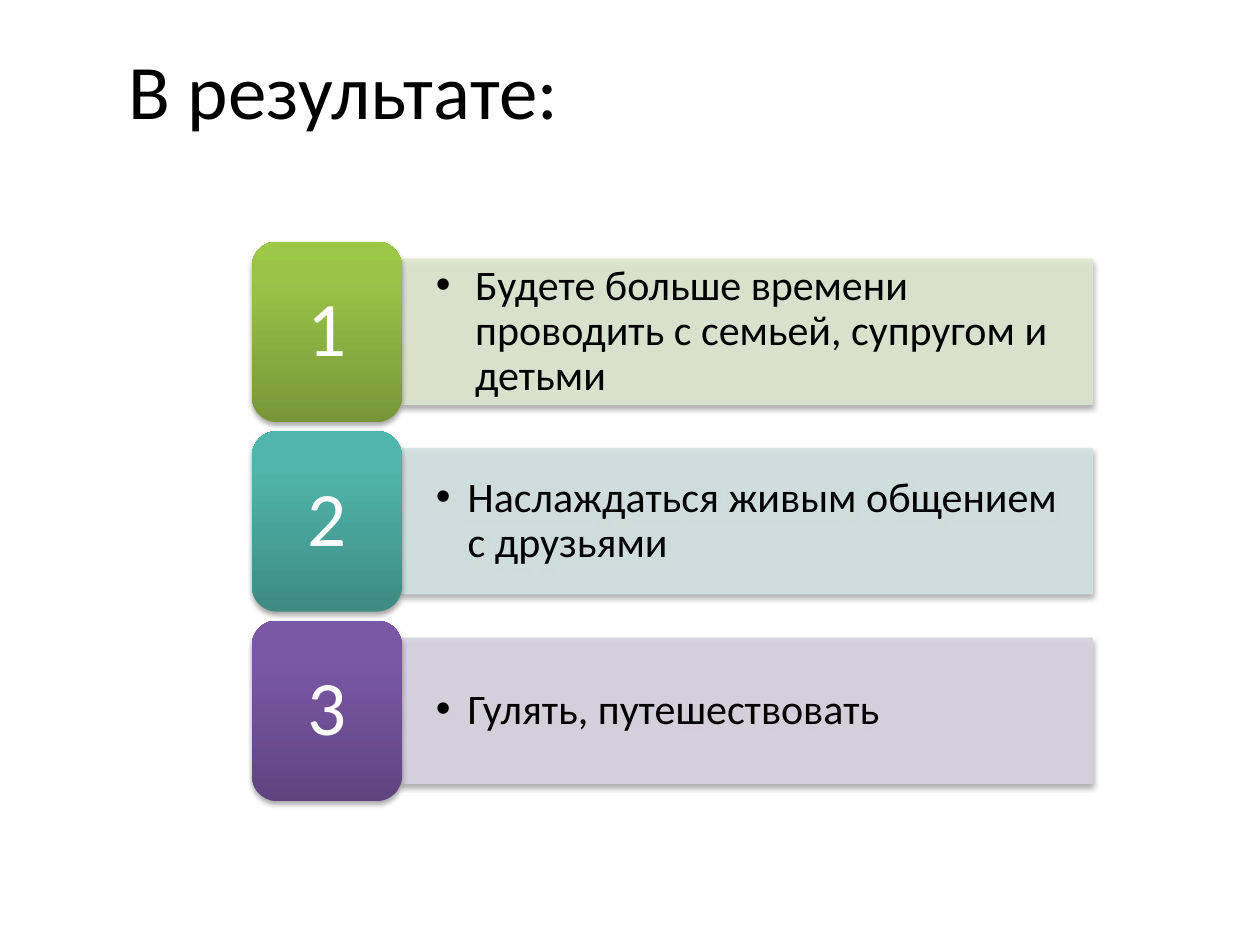
from lxml import etree
from pptx import Presentation
from pptx.dml.color import RGBColor
from pptx.enum.shapes import MSO_SHAPE
from pptx.enum.text import MSO_ANCHOR, PP_ALIGN
from pptx.oxml.ns import qn
from pptx.util import Cm, Pt

RECTANGLE, ROUNDED = MSO_SHAPE.RECTANGLE, MSO_SHAPE.ROUNDED_RECTANGLE
MIDDLE = MSO_ANCHOR.MIDDLE
LEFT, CENTER = PP_ALIGN.LEFT, PP_ALIGN.CENTER

TITLE = "В результате:"
# text, bullet indent in cm, bar colour, tile gradient from bottom to top
RESULTS = [
    ("Будете больше времени проводить с семьей, супругом и детьми", 0.79,
     "DEE7D1", ("779737", "9BC348", "9DC746")),
    ("Наслаждаться живым общением с друзьями", 0.64,
     "D2E3E2", ("3D8B83", "50B5AA", "4EB8AC")),
    ("Гулять, путешествовать", 0.64,
     "D8D3E0", ("5F4480", "7B58A6", "7C57A8")),
]
THEME = {
    "font": "Calibri", "dark": "000000", "light": "FFFFFF",
    "large": 44, "body": 24,
    "stops": (0, 80, 100), "bar_alpha": 90, "shadow_alpha": 35,
}
TITLE_PLACE = (2.34, 0.84, 22.43, 1.88)
TILE_LEFT, TILE_TOP, TILE_WIDTH, TILE_HEIGHT = 5.08, 4.87, 3.02, 3.64
ROW_PITCH = 3.82
BAR_WIDTH, BAR_HEIGHT = 13.92, 2.92


def add_child(parent, tag, **attributes):
    values = {name: str(value) for name, value in attributes.items()}
    return etree.SubElement(parent, qn(tag), values)


def add_color(parent, color, alpha=100):
    node = add_child(parent, "a:srgbClr", val=color)
    if alpha < 100:
        add_child(node, "a:alpha", val=alpha * 1000)


def add_block(slide, kind, place):
    """Add a preset shape with a soft shadow straight below it."""
    block = slide.shapes.add_shape(kind, *map(Cm, place))
    block.shadow.inherit = False
    effects = block._element.spPr.find(qn("a:effectLst"))
    shadow = add_child(effects, "a:outerShdw", blurRad=Pt(3.1), dist=Pt(1.8),
                       dir=5400000, rotWithShape=0)
    add_color(shadow, THEME["dark"], THEME["shadow_alpha"])
    return block


def fill_bar(bar, color):
    bar.fill.solid()
    bar.fill.fore_color.rgb = RGBColor.from_string(color)
    bar.line.color.rgb = RGBColor.from_string(color)
    bar.line.width = Pt(0.75)
    for node in bar._element.spPr.iter(qn("a:srgbClr")):
        if node.get("val") == color:
            add_child(node, "a:alpha", val=THEME["bar_alpha"] * 1000)


def fill_tile(tile, colors):
    tile.fill.gradient()
    tile.fill.gradient_angle = 90
    stops = next(tile._element.spPr.iter(qn("a:gsLst")))
    for stop in list(stops):
        stops.remove(stop)
    for position, color in zip(THEME["stops"], colors):
        add_color(add_child(stops, "a:gs", pos=position * 1000), color)
    tile.line.fill.background()


def write(box, text, size, color, align, margins=None, indent=0, spacing=0.9):
    frame = box.text_frame
    frame.word_wrap = True
    frame.vertical_anchor = MIDDLE
    if margins:
        across, down = map(Cm, margins)
        for side, value in {"left": across, "right": across,
                            "top": down, "bottom": down}.items():
            setattr(frame, f"margin_{side}", value)
    para = frame.paragraphs[0]
    if indent:
        properties = para._p.get_or_add_pPr()
        properties.set("marL", str(Cm(indent)))
        properties.set("indent", str(-Cm(indent)))
        add_child(properties, "a:buFont", typeface="Arial")
        add_child(properties, "a:buChar", char="•")
    para.alignment = align
    para.line_spacing = spacing
    span = para.add_run()
    span.text = text
    for name, value in {"name": THEME["font"], "size": Pt(size)}.items():
        setattr(span.font, name, value)
    span.font.color.rgb = RGBColor.from_string(color)


def add_result(slide, index, text, indent, bar_color, tile_colors):
    top = TILE_TOP + index * ROW_PITCH
    bar = add_block(slide, RECTANGLE, (
        TILE_LEFT + TILE_WIDTH, top + (TILE_HEIGHT - BAR_HEIGHT) / 2,
        BAR_WIDTH, BAR_HEIGHT))
    fill_bar(bar, bar_color)
    write(bar, text, THEME["body"], THEME["dark"], LEFT, (0.69, 0.35), indent)

    tile = add_block(slide, ROUNDED, (TILE_LEFT, top, TILE_WIDTH, TILE_HEIGHT))
    fill_tile(tile, tile_colors)
    write(tile, str(index + 1), THEME["large"], THEME["light"], CENTER, (0.6, 0.38))


def main():
    deck = Presentation()
    deck.slide_width, deck.slide_height = Cm(25.4), Cm(19.05)
    slide = deck.slides.add_slide(deck.slide_layouts[5])
    title = slide.shapes.title
    for name, value in zip(("left", "top", "width", "height"), TITLE_PLACE):
        setattr(title, name, Cm(value))
    write(title, TITLE, THEME["large"], THEME["dark"], LEFT, spacing=1.0)
    for index, result in enumerate(RESULTS):
        add_result(slide, index, *result)
    deck.save("out.pptx")


if __name__ == "__main__":
    main()
